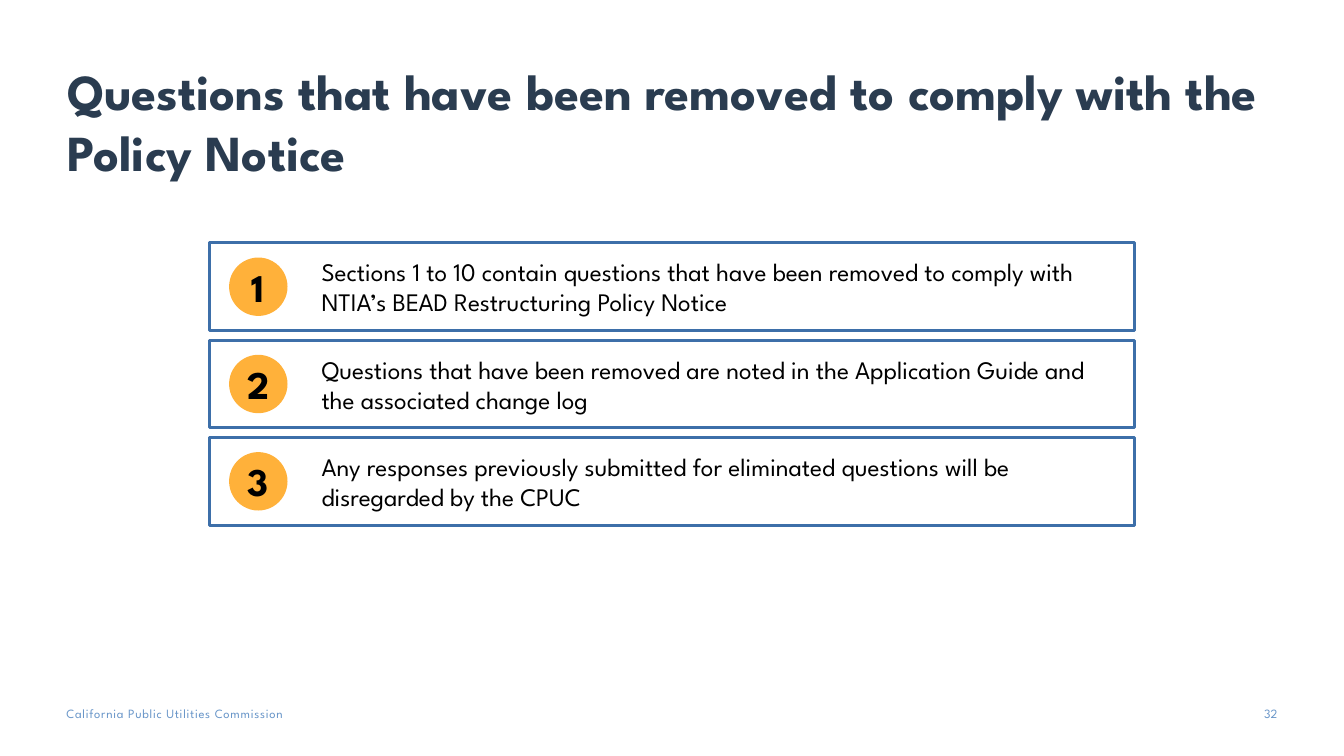
from dataclasses import dataclass

from pptx import Presentation
from pptx.dml.color import RGBColor
from pptx.enum.shapes import MSO_SHAPE
from pptx.enum.text import MSO_ANCHOR, MSO_AUTO_SIZE, PP_ALIGN
from pptx.util import Inches, Pt

RECT, OVAL = MSO_SHAPE.RECTANGLE, MSO_SHAPE.OVAL
LEFT, CENTER, RIGHT = PP_ALIGN.LEFT, PP_ALIGN.CENTER, PP_ALIGN.RIGHT
TOP, MIDDLE, BOTTOM = MSO_ANCHOR.TOP, MSO_ANCHOR.MIDDLE, MSO_ANCHOR.BOTTOM
NO_FIT = MSO_AUTO_SIZE.NONE


@dataclass(frozen=True)
class Theme:
    """Hold the colours, the font and the type sizes."""
    font: str = "League Spartan"
    navy: str = "2A3C50"
    blue: str = "3D6FA9"
    pale: str = "6996C9"
    gold: str = "FFB13A"
    black: str = "000000"
    head: int = 36
    mark: int = 28
    body: int = 18
    foot: int = 9
    edge: float = 2.25


THEME = Theme()
TITLE = "Questions that have been removed to comply with the Policy Notice"
ITEMS = [
    "Sections 1 to 10 contain questions that have been removed to comply with "
    "NTIA’s BEAD Restructuring Policy Notice",
    "Questions that have been removed are noted in the Application Guide and "
    "the associated change log",
    "Any responses previously submitted for eliminated questions will be "
    "disregarded by the CPUC",
]


def write(shape, text, size, color, bold=False, align=LEFT, anchor=TOP,
          pad=(0, 0, 0, 0), track=0):
    """Put formatted text into a shape; pad is left, top, right, bottom."""
    frame = shape.text_frame
    frame.word_wrap, frame.auto_size = True, NO_FIT
    frame.vertical_anchor = anchor
    (frame.margin_left, frame.margin_top,
     frame.margin_right, frame.margin_bottom) = map(Inches, pad)
    para = frame.paragraphs[0]
    para.alignment = align
    run = para.add_run()
    run.text = text
    font = run.font
    font.name, font.size, font.bold = THEME.font, Pt(size), bold
    font.color.rgb = RGBColor.from_string(color)
    if track:
        run._r.get_or_add_rPr().set("spc", str(round(track * 100)))


def draw(slide, kind, box, fill=None, line=None):
    """Add a flat shape with an optional fill and outline."""
    shape = slide.shapes.add_shape(kind, *map(Inches, box))
    shape.shadow.inherit = False
    if fill:
        shape.fill.solid()
        shape.fill.fore_color.rgb = RGBColor.from_string(fill)
    else:
        shape.fill.background()
    if line:
        shape.line.color.rgb = RGBColor.from_string(line)
        shape.line.width = Pt(THEME.edge)
    else:
        shape.line.fill.background()
    return shape


def head(slide, box):
    """Place the slide title in its placeholder."""
    title = slide.shapes.title
    title.left, title.top, title.width, title.height = map(Inches, box)
    write(title, TITLE, THEME.head, THEME.navy, bold=True, anchor=BOTTOM,
          pad=(0, 0.05, 0.1, 0.05))


def card(slide, box, mark, text):
    """Draw one framed statement with a numbered disc."""
    left, top, width, height = box
    frame = draw(slide, RECT, box, line=THEME.blue)
    write(frame, text, THEME.body, THEME.black, anchor=MIDDLE,
          pad=(width * 0.121, 0, width * 0.017, 0))
    disc = height * 2 / 3
    spot = (left + width * 0.021, top + (height - disc) / 2, disc, disc)
    write(draw(slide, OVAL, spot, fill=THEME.gold), mark, THEME.mark,
          THEME.black, bold=True, align=CENTER, anchor=MIDDLE)


def cards(slide, box):
    """Stack the statements in equal rows with a tenth of a row between."""
    left, top, width, height = box
    count = len(ITEMS)
    row = height / (count + 0.11 * (count - 1))
    for index, text in enumerate(ITEMS):
        place = (left, top + index * row * 1.11, width, row)
        card(slide, place, str(index + 1), text)


def foot(slide, box):
    """Place the agency name and the page number at the two ends."""
    left, top, width, height = box
    name = slide.shapes.add_textbox(
        *map(Inches, (left, top, width * 0.27, height)))
    write(name, "California Public Utilities Commission", THEME.foot,
          THEME.pale, track=0.5)
    tab = width * 0.035
    page = slide.shapes.add_textbox(
        *map(Inches, (left + width - tab, top, tab, height)))
    write(page, "32", THEME.foot, THEME.pale, align=RIGHT)


def main():
    """Build and save the slide."""
    deck = Presentation()
    deck.slide_width, deck.slide_height = Inches(13.33), Inches(7.5)
    slide = deck.slides.add_slide(deck.slide_layouts[5])
    head(slide, (0.67, 0.4, 12, 1.45))
    cards(slide, (2.08, 2.41, 9.17, 2.8))
    foot(slide, (0.66, 7, 12.01, 0.2))
    deck.save("out.pptx")


if __name__ == "__main__":
    main()
